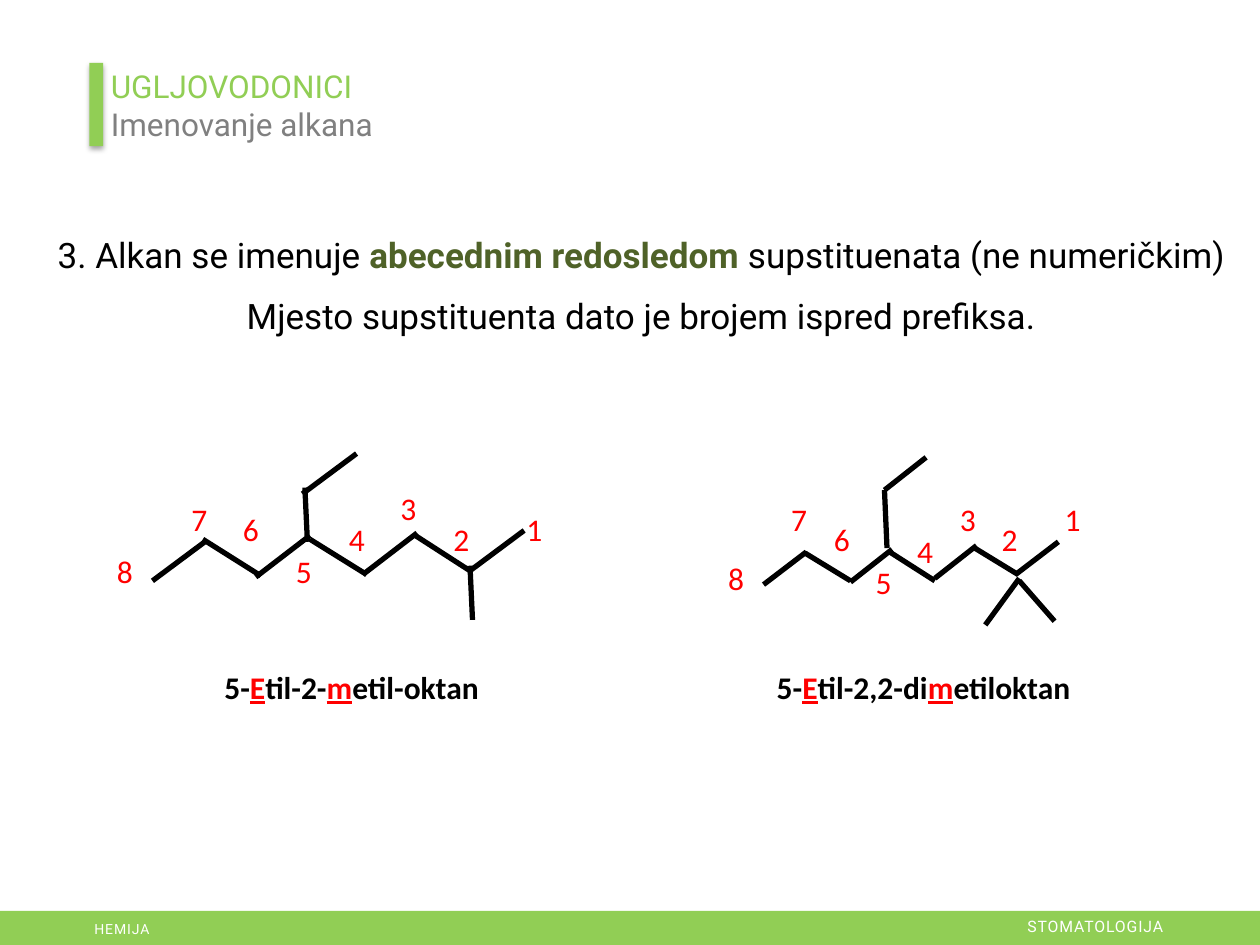
from lxml.etree import SubElement
from pptx import Presentation
from pptx.dml.color import RGBColor
from pptx.enum.shapes import MSO_CONNECTOR, MSO_SHAPE
from pptx.enum.text import MSO_ANCHOR, PP_ALIGN
from pptx.oxml.ns import qn
from pptx.util import Inches, Pt

# Content
W, H = 10, 7.5
COLORS = dict(green="91CE55", gray="808080", olive="4F6228",
              red="FF0000", black="000000", white="FFFFFF")
BODY, HEAD = "Calibri", "Roboto"

# Runs: text, colour, then optional style letters (b = bold, u = underline)
TITLE = [[("UGLJOVODONICI", "green", "")], [("Imenovanje alkana", "gray", "")]]
RULE = [
    [("3. Alkan se imenuje ", "black", ""),
     ("abecednim redosledom ", "olive", "b"),
     ("supstituenata (ne numeričkim)", "black", "")],
    [("Mjesto supstituenta dato je brojem ispred prefiksa.", "black", "")],
]

# Each molecule: numbered carbons (left, top), bonds (x1, y1, x2, y2), name
MOLECULES = [
    dict(
        label_w=0.4,
        labels={"8": (0.83, 4.33), "7": (1.42, 3.92), "6": (1.83, 4),
                "5": (2.25, 4.33), "4": (2.67, 4.08), "3": (3.08, 3.83),
                "2": (3.5, 4.08), "1": (4.08, 4)},
        bonds=[(1.21, 4.61, 1.64, 4.29), (1.61, 4.28, 2.07, 4.57),
               (2.03, 4.58, 2.46, 4.25), (2.46, 4.28, 2.91, 4.56),
               (2.88, 4.56, 3.31, 4.23), (3.28, 4.24, 3.73, 4.53),
               (3.73, 4.53, 4.16, 4.21), (2.44, 4.3, 2.42, 3.87),
               (2.4, 3.92, 2.83, 3.6), (3.75, 4.92, 3.73, 4.49)],
        name_box=(0.25, 5.25, 5.08, 0.4),
        name=["5-", "E", "til-2-", "m", "etil-oktan"]),
    dict(
        label_w=0.32,
        labels={"8": (5.68, 4.39), "7": (6.18, 3.92), "6": (6.52, 4.08),
                "5": (6.85, 4.42), "4": (7.18, 4.17), "3": (7.52, 3.92),
                "2": (7.85, 4.08), "1": (8.35, 3.92)},
        bonds=[(6.06, 4.64, 6.4, 4.38), (6.39, 4.39, 6.75, 4.61),
               (6.75, 4.62, 7.08, 4.36), (7.06, 4.38, 7.42, 4.61),
               (7.42, 4.59, 7.75, 4.33), (7.72, 4.34, 8.08, 4.56),
               (8.06, 4.56, 8.4, 4.3), (7.04, 4.35, 7.02, 3.89),
               (7.02, 3.89, 7.35, 3.63), (7.82, 4.96, 8.09, 4.59),
               (8.09, 4.61, 8.37, 4.93)],
        name_box=(4.83, 5.25, 5, 0.4),
        name=["5-", "E", "til-2,2-di", "m", "etiloktan"]),
]


def color(name):
    return RGBColor.from_string(COLORS[name])


def add_text(shapes, box, paras, size, font, align=PP_ALIGN.LEFT,
             inset=(0.1, 0.05), wrap=True, gap=0, spacing=None):
    tf = shapes.add_textbox(*map(Inches, box)).text_frame
    tf.word_wrap = wrap
    tf.vertical_anchor = MSO_ANCHOR.TOP
    tf.margin_left = tf.margin_right = Inches(inset[0])
    tf.margin_top = tf.margin_bottom = Inches(inset[1])
    for i, runs in enumerate(paras):
        p = tf.add_paragraph() if i else tf.paragraphs[0]
        p.alignment = align
        p.space_before = Pt(gap if i else 0)
        for text, tint, style in runs:
            r = p.add_run()
            r.text = text
            r.font.size, r.font.name = Pt(size), font
            r.font.color.rgb = color(tint)
            r.font.bold = "b" in style
            r.font.underline = "u" in style
            if spacing:
                r.font._element.set("spc", str(spacing))


def add_bar(shapes, box):
    sp = shapes.add_shape(MSO_SHAPE.RECTANGLE, *map(Inches, box))
    sp.shadow.inherit = False
    sp.fill.solid()
    sp.fill.fore_color.rgb = color("green")
    sp.line.fill.background()
    return sp


def add_bond(shapes, ends):
    c = shapes.add_connector(MSO_CONNECTOR.STRAIGHT, *map(Inches, ends))
    c.line.color.rgb = color("black")
    c.line.width = Pt(3)
    SubElement(c._element.spPr, qn("a:effectLst"))


def add_shadow(sp):
    effects = sp._element.spPr.find(qn("a:effectLst"))
    shadow = SubElement(effects, qn("a:outerShdw"), blurRad=str(Pt(3.1)),
                        dist=str(Pt(1.8)), dir="5400000", rotWithShape="0")
    tint = SubElement(shadow, qn("a:srgbClr"), val=COLORS["black"])
    SubElement(tint, qn("a:alpha"), val="35000")


prs = Presentation()
prs.slide_width, prs.slide_height = Inches(W), Inches(H)
s = prs.slides.add_slide(prs.slide_layouts[6])

# Molecules with numbered carbons and names
for mol in MOLECULES:
    group = s.shapes.add_group_shape().shapes
    for ends in mol["bonds"]:
        add_bond(group, ends)
    for number, (x, y) in mol["labels"].items():
        add_text(group, (x, y, mol["label_w"], 0.4),
                 [[(number, "red", "")]], 18, BODY)
    # Every second part is the letter that decides the order
    name = [(part, "red", "bu") if i % 2 else (part, "black", "b")
            for i, part in enumerate(mol["name"])]
    add_text(s.shapes, mol["name_box"], [name], 18, BODY, PP_ALIGN.CENTER)

# Title with accent bar
add_text(s.shapes, (0.83, 0.5, 8.34, 0.66), TITLE, 18, HEAD, inset=(0.05, 0.03))
add_shadow(add_bar(s.shapes, (0.71, 0.5, 0.11, 0.66)))

# Naming rule
add_text(s.shapes, (0.33, 1.8, 9.52, 1.95), RULE, 20, HEAD,
         PP_ALIGN.CENTER, wrap=False, gap=11)

# Footer
footer = s.shapes.add_group_shape().shapes
add_bar(footer, (0, H - 0.27, W, 0.27))
add_text(footer, (0.65, 7.26, 4.6, 0.24), [[("HEMIJA", "white", "")]],
         8, HEAD, spacing=50)
add_text(footer, (6.38, 7.23, 2.95, 0.25), [[("STOMATOLOGIJA", "white", "")]],
         9, HEAD, PP_ALIGN.RIGHT, spacing=50)

prs.save("out.pptx")
